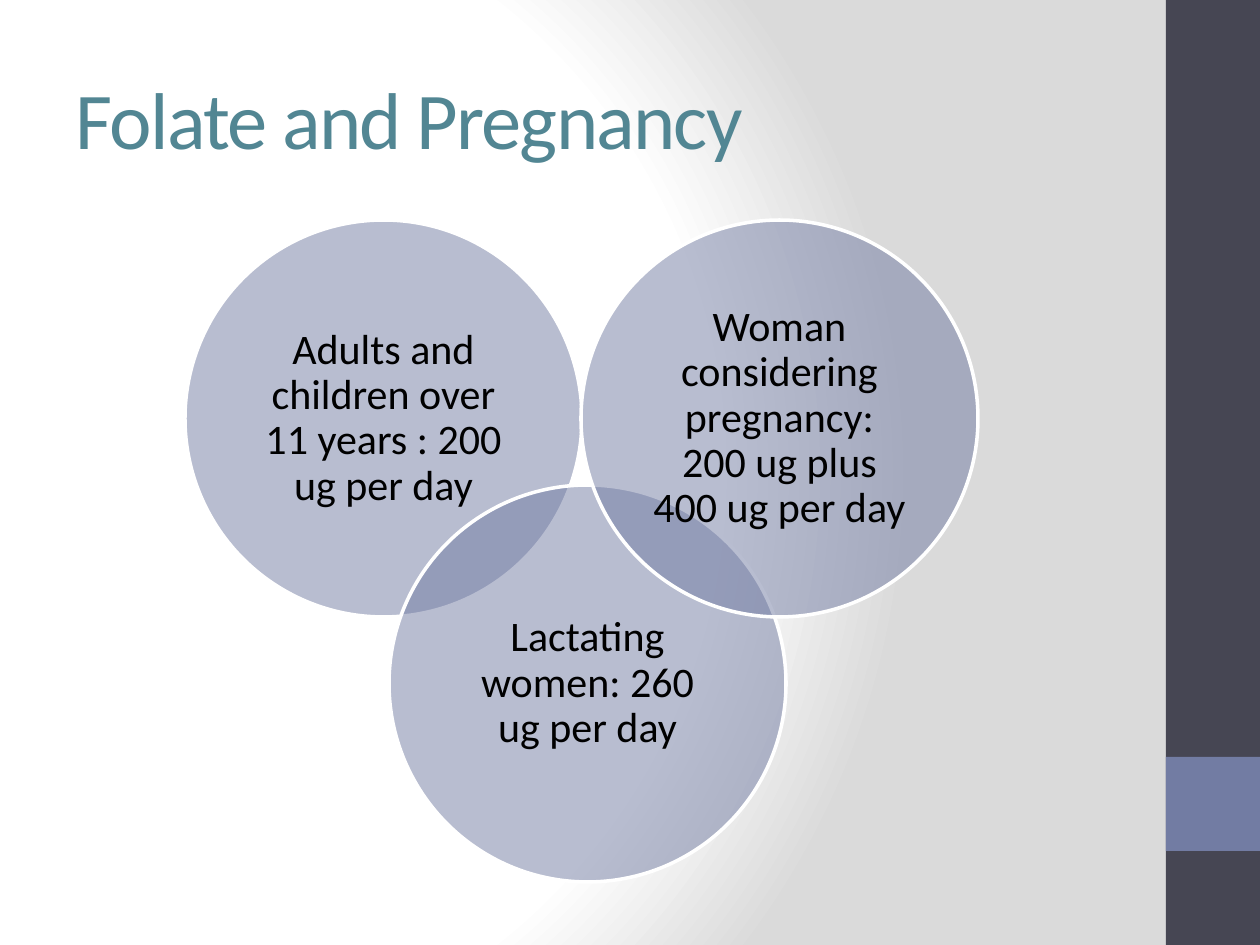
from dataclasses import dataclass

from pptx import Presentation
from pptx.dml.color import RGBColor
from pptx.enum.shapes import MSO_SHAPE
from pptx.enum.text import MSO_ANCHOR, PP_ALIGN
from pptx.oxml import parse_xml
from pptx.oxml.ns import nsdecls, qn
from pptx.util import Emu, Pt

SCALE = 914400 / 126  # EMU in one px


@dataclass(frozen=True)
class Theme:
    font: str = "Calibri"
    head: str = "528693"
    text: str = "000000"
    dark: str = "464653"
    tint: str = "727CA3"
    line: str = "FFFFFF"
    light: str = "FFFFFF"
    shade: str = "DADADA"
    big: int = 46
    body: int = 24


THEME = Theme()


def px(num):
    return Emu(round(num * SCALE))


def apply(item, values):
    for name, value in values.items():
        setattr(item, name, value)


def place(item, box):
    apply(item, dict(zip(("left", "top", "width", "height"), map(px, box))))


def style(font, size, color):
    apply(font, {"name": THEME.font, "size": Pt(size)})
    font.color.rgb = RGBColor.from_string(color)


def add_form(slide, kind, box, color):
    form = slide.shapes.add_shape(kind, *map(px, box))
    form.shadow.inherit = False
    form.fill.solid()
    form.fill.fore_color.rgb = RGBColor.from_string(color)
    form.line.fill.background()
    return form


# Background: radial gradient, light centre to grey edge
def paint_back(slide):
    slide.background.fill.solid()
    back = slide._element.find(".//" + qn("p:bgPr"))
    stops = ((0, THEME.light), (75, THEME.light), (100, THEME.shade))
    marks = "".join(
        f'<a:gs pos="{pos * 1000}"><a:srgbClr val="{color}"/></a:gs>'
        for pos, color in stops
    )
    back.replace(back[0], parse_xml(
        f'<a:gradFill {nsdecls("a")} rotWithShape="1"><a:gsLst>{marks}</a:gsLst>'
        '<a:path path="circle"><a:fillToRect l="20000" t="50000" '
        'r="100000" b="50000"/></a:path></a:gradFill>'
    ))


# Side band with a square accent
def add_band(slide, box):
    left, top, width, height = box
    add_form(slide, MSO_SHAPE.RECTANGLE, box, THEME.dark)
    accent = (left, top + height - 2 * width, width, width)
    add_form(slide, MSO_SHAPE.RECTANGLE, accent, THEME.tint)


# Title placeholder
def set_title(slide, box, text):
    title = slide.shapes.title
    place(title, box)
    frame = title.text_frame
    apply(frame, {"text": text, "word_wrap": True,
                  "vertical_anchor": MSO_ANCHOR.MIDDLE})
    line = frame.paragraphs[0]
    line.alignment = PP_ALIGN.LEFT
    run = line.runs[0]
    style(run.font, THEME.big, THEME.head)
    run.font._element.set("spc", "-100")


# One half-clear circle with its label
def add_disc(slide, box, text):
    disc = add_form(slide, MSO_SHAPE.OVAL, box, THEME.tint)
    tone = disc._element.spPr.find(qn("a:solidFill"))[0]
    tone.append(parse_xml(f'<a:alpha {nsdecls("a")} val="50000"/>'))
    disc.line.color.rgb = RGBColor.from_string(THEME.line)
    disc.line.width = Pt(2)
    frame = disc.text_frame
    apply(frame, {"text": text, "word_wrap": True,
                  "vertical_anchor": MSO_ANCHOR.MIDDLE})
    for side in ("left", "top", "right", "bottom"):
        setattr(frame, f"margin_{side}", px(12))
    line = frame.paragraphs[0]
    apply(line, {"alignment": PP_ALIGN.CENTER, "line_spacing": 0.9})
    style(line.runs[0].font, THEME.body, THEME.text)


# Three overlapping circles, back to front
def add_venn(slide, box):
    left, top, width, height = box
    size = 397
    discs = (
        (0, 0, "Adults and children over 11 years : 200 ug per day"),
        (204, height - size, "Lactating women: 260 ug per day"),
        (width - size, 0,
         "Woman considering pregnancy: 200 ug plus 400 ug per day"),
    )
    for x, y, text in discs:
        add_disc(slide, (left + x, top + y, size, size), text)


def main():
    deck = Presentation()
    apply(deck, {"slide_width": px(1260), "slide_height": px(945)})
    slide = deck.slides.add_slide(deck.slide_layouts[5])
    paint_back(slide)
    add_band(slide, (1166, 0, 94, 945))
    set_title(slide, (63, 38, 1050, 158), "Folate and Pregnancy")
    add_venn(slide, (185, 220, 793, 662))
    deck.save("out.pptx")


if __name__ == "__main__":
    main()
